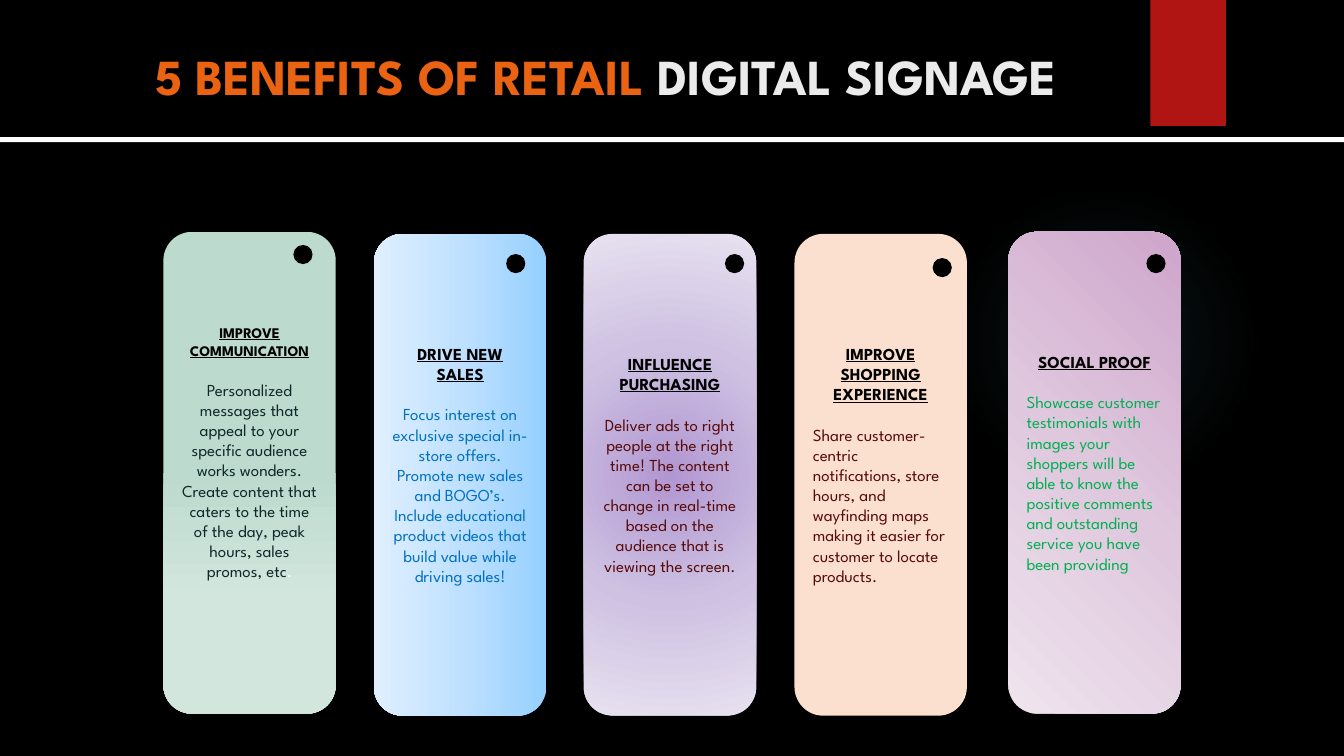
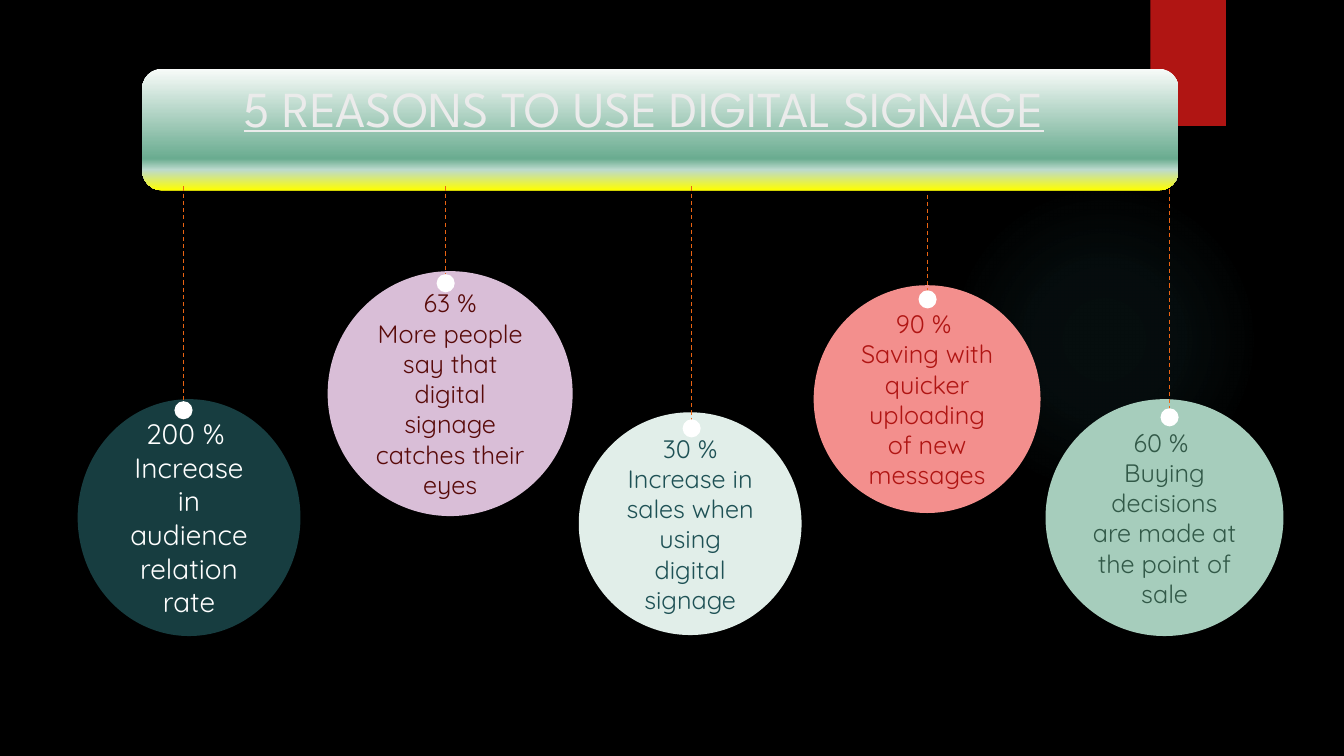
from lxml import etree
from pptx import Presentation
from pptx import util as u
from pptx.dml.color import RGBColor
from pptx.enum import dml, shapes, text
from pptx.oxml.ns import qn

BLACK, WHITE, ORANGE, RED, PALE = "000000", "FFFFFF", "EA6312", "B01513", "EBEBEB"
HEAD_FONT, BODY_FONT = "League Spartan", "Quicksand"
MAROON = "580A09"
CENTER, LEFT = text.PP_ALIGN.CENTER, text.PP_ALIGN.LEFT
OVAL = shapes.MSO_SHAPE.OVAL
RECT = shapes.MSO_SHAPE.RECTANGLE
ROUND = shapes.MSO_SHAPE.ROUNDED_RECTANGLE

GLOW = {"stops": [(0, "50B9C1", 7), (36, "50B9C1", 6), (69, "50B9C1", 0)],
        "focus": (50, 50, 50, 50)}
BANNER = {"stops": [(0, "F8FBF9"), (74, "6AAC90"), (83, "BCDACD"), (100, "FFFF00")],
          "angle": 90}

CARD_W, CARD_H, DOT, LINE_GAP = 1.71, 4.78, 0.19, 0.2
CARDS = [
    {"at": (1.62, 2.3), "dot": (2.91, 2.43), "color": "0F282A", "align": CENTER,
     "head": "IMPROVE COMMUNICATION", "head_size": 10.5, "lift": 2,
     "body": [("Personalized messages that appeal to your specific audience works wonders. "
               "Create content that caters to the time of the day, peak hours, sales promos, etc",
               "0F282A"), (".", WHITE)],
     "fill": {"stops": [(0, "BCDACD"), (50, "BCDACD"), (76, "D2E6DE")], "angle": 90}},
    {"at": (3.71, 2.32), "dot": (5.02, 2.52), "align": CENTER,
     "head": "DRIVE NEW SALES", "head_size": 12, "lift": 1,
     "body": [("Focus interest on exclusive special in-store offers. Promote new sales and "
               "BOGO’s. Include educational product videos that build value while driving sales!",
               "0070C0")],
     "fill": {"stops": [(0, "96D0FF"), (50, "BFE1FF"), (100, "E0EFFF")], "angle": 180}},
    {"at": (5.79, 2.32), "dot": (7.19, 2.52), "align": CENTER,
     "head": "INFLUENCE PURCHASING", "head_size": 12, "lift": 1,
     "body": [("Deliver ads to right people at the right time! The content can be set to change "
               "in real-time based on the audience that is viewing the screen.", MAROON)],
     "fill": {"stops": [(0, "B197D2"), (50, "CEC1E2"), (100, "E7E1F0")],
              "focus": (50, 50, 50, 50)}},
    {"at": (7.88, 2.32), "dot": (9.25, 2.56), "align": LEFT,
     "head": "IMPROVE SHOPPING EXPERIENCE", "head_size": 12, "lift": 1,
     "body": [("Share customer-centric notifications, store hours, and wayfinding maps making "
               "it easier for customer to locate products.", MAROON)],
     "fill": "FBE0CF"},
    {"at": (10, 2.3), "dot": (11.37, 2.52), "align": LEFT,
     "head": "SOCIAL PROOF", "head_size": 12, "lift": 1,
     "body": [("Showcase customer testimonials with images your shoppers will be able to know "
               "the positive comments and outstanding service you have been providing", "00B050")],
     "fill": {"stops": [(0, "CEA5CB"), (50, "DFC8DE"), (100, "EFE4EE")],
              "focus": (100, 0, 0, 100)}},
]

PIN = 0.18
REASONS = [
    ((0.77, 3.96, 2.21, 2.35), "173D40", WHITE, 20, (1.73, 3.98), 1.85,
     "200 % ", "Increase in audience relation rate"),
    ((3.25, 2.69, 2.43, 2.43), "D9BED7", MAROON, 18, (4.33, 2.72), 1.85,
     "63 %", "More people say that digital signage catches their eyes"),
    ((5.74, 4.09, 2.21, 2.21), "E1EEE9", "1E5155", 18, (6.77, 4.16), 1.85,
     "30 %", "Increase in sales when using digital signage"),
    ((8.07, 2.83, 2.25, 2.26), "F38F8D", RED, 18, (9.11, 2.88), 1.93,
     "90 % ", "Saving with quicker uploading of new messages"),
    ((10.37, 3.96, 2.36, 2.35), "A6CDBC", "325948", 18, (11.51, 4.05), 1.88,
     "60 % ", "Buying decisions are made at the point of sale"),
]


def rgb(value):
    return RGBColor.from_string(value)


def add(parent, tag, **attrs):
    return etree.SubElement(parent, qn(tag), {k: str(v) for k, v in attrs.items()})


def set_gradient(sp, stops, angle=None, focus=None):
    sp.fill.background()
    props = sp.element.spPr
    grad = etree.Element(qn("a:gradFill"), rotWithShape="1")
    props.replace(props.find(qn("a:noFill")), grad)
    stop_list = add(grad, "a:gsLst")
    for pos, color, *alpha in stops:
        clr = add(add(stop_list, "a:gs", pos=pos * 1000), "a:srgbClr", val=color)
        for value in alpha:
            add(clr, "a:alpha", val=value * 1000)
    if focus:
        sides = {k: v * 1000 for k, v in zip("ltrb", focus)}
        add(add(grad, "a:path", path="circle"), "a:fillToRect", **sides)
    else:
        add(grad, "a:lin", ang=angle * 60000, scaled=0)


def add_shape(s, kind, box, fill):
    sp = s.shapes.add_shape(kind, *map(u.Inches, box))
    sp.shadow.inherit = False
    sp.line.fill.background()
    if isinstance(fill, dict):
        set_gradient(sp, **fill)
    else:
        sp.fill.solid()
        sp.fill.fore_color.rgb = rgb(fill)
    return sp


def set_font(font, name, size, color=None, **flags):
    font.name, font.size = name, u.Pt(size)
    if color:
        font.color.rgb = rgb(color)
    for flag, value in flags.items():
        setattr(font, flag, value)


def add_runs(p, runs):
    for words, color in runs:
        r = p.add_run()
        r.text = words
        r.font.color.rgb = rgb(color)


def add_title(s, box, runs, align, **flags):
    tf = s.shapes.add_textbox(*map(u.Inches, box)).text_frame
    tf.word_wrap = True
    p = tf.paragraphs[0]
    p.alignment = align
    add_runs(p, runs)
    set_font(p.font, HEAD_FONT, 36, **flags)
    return p


def add_text_shadow(r):
    effects = etree.Element(qn("a:effectLst"))
    shadow = add(effects, "a:outerShdw", blurRad=u.Pt(3), dist=u.Pt(3), dir=5400000)
    add(add(shadow, "a:srgbClr", val=BLACK), "a:alpha", val=45000)
    r.font.fill._xPr.find(qn("a:solidFill")).addnext(effects)


def new_slide(prs):
    s = prs.slides.add_slide(prs.slide_layouts[6])
    s.background.fill.solid()
    s.background.fill.fore_color.rgb = rgb(BLACK)
    add_shape(s, OVAL, (9.41, 1.83, 3.08, 3.08), GLOW)
    add_shape(s, RECT, (11.41, 0, 0.75, 1.25), RED)
    return s


def add_card(s, card):
    sp = add_shape(s, ROUND, (*card["at"], CARD_W, CARD_H), card["fill"])
    tf = sp.text_frame
    tf.word_wrap = True
    tf.vertical_anchor = text.MSO_ANCHOR.MIDDLE
    tf.margin_bottom = u.Inches(0.05 + LINE_GAP * card["lift"])
    p = tf.paragraphs[0]
    p.text = card["head"]
    p.alignment = CENTER
    p.space_after = u.Inches(LINE_GAP)
    set_font(p.font, HEAD_FONT, card["head_size"], BLACK, bold=True, underline=True)
    p = tf.add_paragraph()
    p.alignment = card["align"]
    add_runs(p, card["body"])
    set_font(p.font, HEAD_FONT, 12)
    add_shape(s, OVAL, (*card["dot"], DOT, DOT), BLACK)


def add_reason(s, box, fill, color, size, pin, top, figure, claim):
    sp = add_shape(s, OVAL, box, fill)
    tf = sp.text_frame
    tf.word_wrap = True
    tf.vertical_anchor = text.MSO_ANCHOR.MIDDLE
    tf.text = f"{figure}\n{claim}"
    for p in tf.paragraphs:
        p.alignment = CENTER
        set_font(p.font, BODY_FONT, size, color)
    x, y = (side + PIN / 2 for side in pin)
    string = s.shapes.add_connector(shapes.MSO_CONNECTOR.STRAIGHT,
                                    *map(u.Inches, (x, top, x, y)))
    string.line.color.rgb = rgb(ORANGE)
    string.line.width = u.Pt(0.75)
    string.line.dash_style = dml.MSO_LINE.DASH
    add(string.element.spPr, "a:effectLst")
    add_shape(s, OVAL, (*pin, PIN, PIN), WHITE)


def main():
    prs = Presentation()
    prs.slide_width, prs.slide_height = u.Inches(13.33), u.Inches(7.5)

    s = new_slide(prs)
    add_title(s, (1.44, 0.4, 11.5, 1.45),
              [("5 BENEFITS OF RETAIL ", ORANGE), ("DIGITAL SIGNAGE", PALE)],
              LEFT, bold=True)
    for card in CARDS:
        add_card(s, card)
    add_shape(s, RECT, (0, 1.36, 13.33, 0.05), WHITE)

    s = new_slide(prs)
    add_shape(s, ROUND, (1.41, 0.68, 10.28, 1.21), BANNER)
    p = add_title(s, (1.24, 0.72, 10.29, 1.53),
                  [("5 REASONS TO USE DIGITAL SIGNAGE", PALE)], CENTER, underline=True)
    add_text_shadow(p.runs[0])
    for reason in REASONS:
        add_reason(s, *reason)

    prs.save("out.pptx")


if __name__ == "__main__":
    main()
